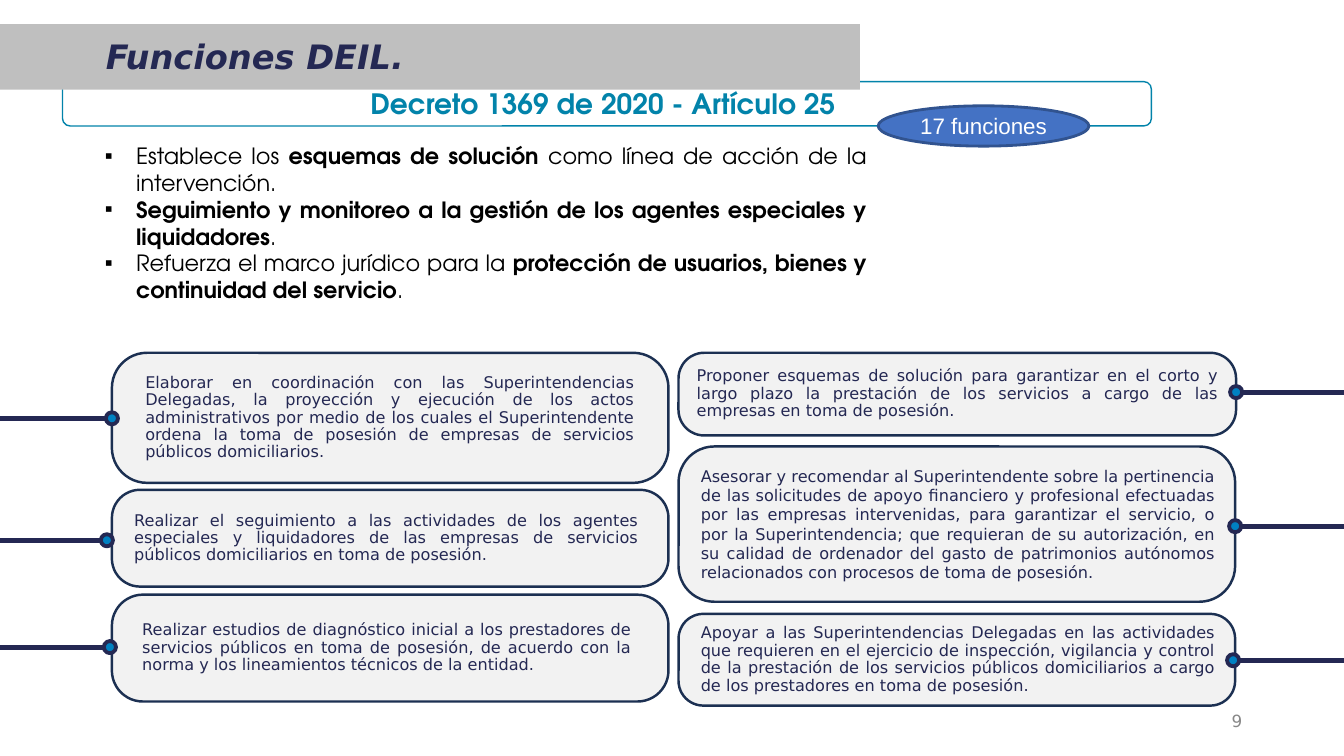
from lxml import etree
from pptx import Presentation
from pptx.dml.color import RGBColor
from pptx.enum.shapes import MSO_CONNECTOR, MSO_SHAPE
from pptx.enum.text import MSO_ANCHOR, MSO_AUTO_SIZE, PP_ALIGN
from pptx.oxml.ns import qn
from pptx.util import Emu, Pt

LINE = MSO_CONNECTOR.STRAIGHT
ROUND, OVAL, RECT = MSO_SHAPE.ROUNDED_RECTANGLE, MSO_SHAPE.OVAL, MSO_SHAPE.RECTANGLE
TOP, MIDDLE = MSO_ANCHOR.TOP, MSO_ANCHOR.MIDDLE
LEFT, CENTER, RIGHT, JUSTIFY = PP_ALIGN.LEFT, PP_ALIGN.CENTER, PP_ALIGN.RIGHT, PP_ALIGN.JUSTIFY
FIXED = MSO_AUTO_SIZE.NONE

SCALE = 9144  # EMU in one px, 100 px to the inch
WIDE, HIGH = 1333, 750
DOT = 12
CORNER = 0.29  # share of the corner radius that a rounded box keeps free of text
INSETS = (10, 5, 10, 5)

COLORS = {
    "white": "FFFFFF", "black": "000000", "navy": "242853", "edge": "1C3052",
    "card": "F2F2F2", "teal": "0283AA", "dot": "0081C2", "blue": "4472C4",
    "rim": "31538F", "band": "BFBFBF", "grey": "888888",
}
FONTS = {
    "title": dict(name="DejaVu Sans", size=Pt(24), bold=True, italic=True),
    "decree": dict(name="TeX Gyre Adventor", size=Pt(20), bold=True),
    "count": dict(name="Arial", size=Pt(16)),
    "list": dict(name="TeX Gyre Adventor", size=Pt(16)),
    "card": dict(name="DejaVu Sans", size=Pt(11.5)),
    "page": dict(name="DejaVu Sans", size=Pt(12)),
}

POINTS = [
    [("Establece los ", False), ("esquemas de solución ", True),
     ("como línea de acción de la intervención.", False)],
    [("Seguimiento y monitoreo a la gestión de los agentes especiales y liquidadores", True),
     (".", False)],
    [("Refuerza el marco jurídico para la ", False),
     ("protección de usuarios, bienes y continuidad del servicio", True), (".", False)],
]

# box, corner, left and right text margins, dot centre, line spacing, text
CARDS = [
    ((111, 350, 552, 129), 0.27, (33, 34), (111, 415), 0.9,
     "Elaborar en coordinación con las Superintendencias Delegadas, la proyección y "
     "ejecución de los actos administrativos por medio de los cuales el Superintendente "
     "ordena la toma de posesión de empresas de servicios públicos domiciliarios."),
    ((111, 486, 552, 96), 0.29, (22, 30), (106, 536), 0.9,
     "Realizar el seguimiento a las actividades de los agentes especiales y liquidadores "
     "de las empresas de servicios públicos domiciliarios en toma de posesión."),
    ((111, 590, 552, 106), 0.29, (30, 37), (109, 642), 0.9,
     "Realizar estudios de diagnóstico inicial a los prestadores de servicios públicos en "
     "toma de posesión, de acuerdo con la norma y los lineamientos técnicos de la entidad."),
    ((673, 350, 553, 82), 0.31, (18, 18), (1226, 389), 0.9,
     "Proponer esquemas de solución para garantizar en el corto y largo plazo la "
     "prestación de los servicios a cargo de las empresas en toma de posesión."),
    ((673, 443, 552, 154), 0.23, (22, 20), (1225, 522), 1.0,
     "Asesorar y recomendar al Superintendente sobre la pertinencia de las solicitudes de "
     "apoyo financiero y profesional efectuadas por las empresas intervenidas, para "
     "garantizar el servicio, o por la Superintendencia; que requieran de su autorización, "
     "en su calidad de ordenador del gasto de patrimonios autónomos relacionados con "
     "procesos de toma de posesión."),
    ((673, 609, 552, 91), 0.27, (22, 20), (1223, 655), 0.9,
     "Apoyar a las Superintendencias Delegadas en las actividades que requieren en el "
     "ejercicio de inspección, vigilancia y control de la prestación de los servicios "
     "públicos domiciliarios a cargo de los prestadores en toma de posesión."),
]


def px(count):
    return Emu(round(count * SCALE))


def rgb(key):
    return RGBColor.from_string(COLORS[key])


def apply(target, values):
    for name, value in values.items():
        setattr(target, name, value)


def frame(shape, anchor, insets=INSETS):
    text = shape.text_frame
    sides = ("margin_left", "margin_top", "margin_right", "margin_bottom")
    apply(text, dict(zip(sides, map(px, insets))))
    apply(text, dict(word_wrap=True, auto_size=FIXED, vertical_anchor=anchor))
    return text


def write(para, runs, style, color, **layout):
    """Fill a paragraph with (text, bold) runs; a bold of None keeps the style."""
    apply(para, dict(space_before=Pt(0), **layout))
    for words, bold in runs:
        run = para.add_run()
        run.text = words
        apply(run.font, FONTS[style])
        run.font.color.rgb = rgb(color)
        if bold is not None:
            run.font.bold = bold


def add_box(slide, kind, box, fill, edge=None, weight=1, corner=None):
    shape = slide.shapes.add_shape(kind, *map(px, box))
    shape.shadow.inherit = False
    shape.fill.solid()
    shape.fill.fore_color.rgb = rgb(fill)
    if edge:
        shape.line.color.rgb = rgb(edge)
        shape.line.width = Pt(weight)
    else:
        shape.line.fill.background()
    if corner is not None:
        shape.adjustments[0] = corner
    return shape


def add_stem(slide, start, end, y):
    stem = slide.shapes.add_connector(LINE, px(start), px(y), px(end), px(y))
    stem.line.color.rgb = rgb("navy")
    stem.line.width = Pt(3.5)
    etree.SubElement(stem.element.spPr, qn("a:effectLst"))


def add_card(slide, box, corner, margins, dot, spacing, words):
    shape = add_box(slide, ROUND, box, "card", "edge", 1.75, corner)
    free = CORNER * corner * box[3]
    insets = (margins[0] - free, 0, margins[1] - free, 0)
    para = frame(shape, MIDDLE, insets).paragraphs[0]
    write(para, [(words, None)], "card", "navy", alignment=JUSTIFY, line_spacing=spacing)
    x, y = dot
    add_stem(slide, 0 if x < WIDE / 2 else WIDE, x, y)
    add_box(slide, OVAL, (x - DOT / 2, y - DOT / 2, DOT, DOT), "dot", "navy", 2.75)


def place(holder, box):
    """Move a placeholder to its box and to the front."""
    apply(holder, dict(zip(("left", "top", "width", "height"), map(px, box))))
    holder.element.getparent().append(holder.element)


def add_bullet(para):
    props = para._p.get_or_add_pPr()
    props.set("marL", str(px(31)))
    props.set("indent", str(px(-31)))
    color = etree.SubElement(props, qn("a:buClr"))
    etree.SubElement(color, qn("a:srgbClr"), val=COLORS["black"])
    etree.SubElement(props, qn("a:buFont"), typeface="Arial")
    etree.SubElement(props, qn("a:buChar"), char="▪")


def fill_list(holder):
    place(holder, (94, 136, 776, 199))
    text = frame(holder, TOP)
    for index, runs in enumerate(POINTS):
        para = text.add_paragraph() if index else text.paragraphs[0]
        add_bullet(para)
        write(para, runs, "list", "black", alignment=JUSTIFY)


def fill_title(holder):
    place(holder, (95, 31, 774, 50))
    para = frame(holder, TOP).paragraphs[0]
    write(para, [("Funciones DEIL.", None)], "title", "navy", alignment=LEFT)


def main():
    deck = Presentation()
    deck.slide_width, deck.slide_height = px(WIDE), px(HIGH)
    slide = deck.slides.add_slide(deck.slide_layouts[1])
    title, body = slide.placeholders

    page = slide.shapes.add_textbox(*map(px, (942, 695, 300, 40)))
    write(frame(page, MIDDLE).paragraphs[0], [("9", None)], "page", "grey", alignment=RIGHT)

    decree = add_box(slide, ROUND, (62, 81, 1080, 44), "white", "teal", 1, 0.17)
    write(frame(decree, MIDDLE).paragraphs[0], [("Decreto 1369 de 2020 - Artículo 25 ", None)],
          "decree", "teal", alignment=CENTER)

    for card in CARDS:
        add_card(slide, *card)

    count = add_box(slide, OVAL, (871, 105, 209, 40), "blue", "rim", 2)
    write(frame(count, MIDDLE).paragraphs[0], [("17 funciones", None)],
          "count", "white", alignment=CENTER)

    fill_list(body)
    add_box(slide, RECT, (0, 24, 853, 65), "band")
    fill_title(title)
    deck.save("out.pptx")


if __name__ == "__main__":
    main()
